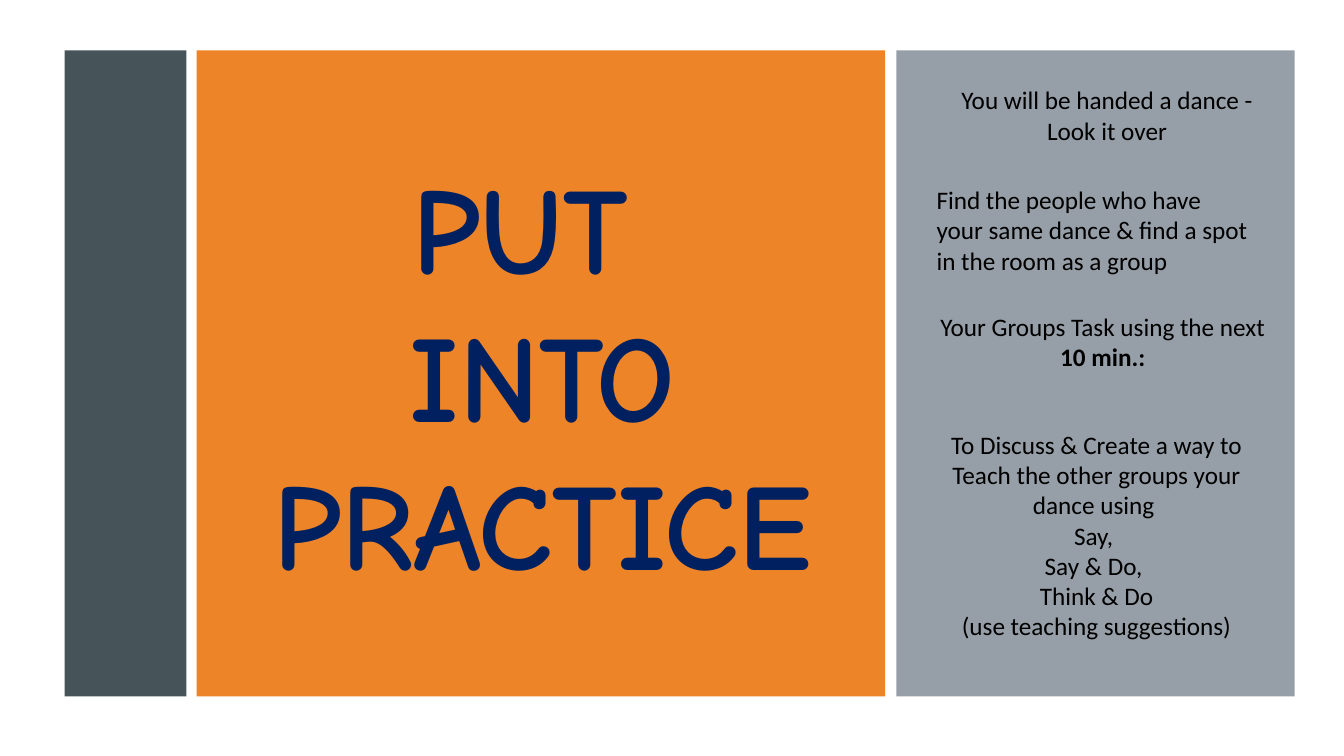
import pptx
import pptx.util
import pptx.dml.color
import pptx.enum.shapes
import pptx.enum.text

Inches = pptx.util.Inches
ALIGN = pptx.enum.text.PP_ALIGN
ANCHOR = pptx.enum.text.MSO_ANCHOR

COLORS = {"slate": "465359", "orange": "ED8428", "gray": "969FA7",
          "navy": "002060", "black": "000000"}

# Panels share one top and height: left, width, color
TOP, HEIGHT = 0.5, 6.41
PANELS = [(0.64, 1.21, "slate"), (1.95, 6.83, "orange"), (8.89, 3.95, "gray")]

# Title: a vertical tab marks a line break
TITLE = ["PUT \vINTO PRACTICE"]
TITLE_BOX = (2.36, 1.12, 6.04, 5.16)

# Notes in the gray panel: box, alignment, lines of (text, bold)
NOTES = [
    ((9.19, 0.79, 3.58, 0.7), ALIGN.CENTER,
     [("You will be handed a dance - Look it over", False)]),
    ((9.19, 1.78, 3.29, 1.01), ALIGN.LEFT,
     [("Find the people who have your same dance & find a spot "
       "in the room as a group", False)]),
    ((8.89, 3.04, 4.15, 0.7), ALIGN.CENTER,
     [("Your Groups Task using the next ", False), ("10 min.: ", True)]),
    ((9.19, 4.21, 3.37, 2.2), ALIGN.CENTER,
     [("To Discuss & Create a way to Teach the other groups your "
       "dance using ", False),
      ("Say, ", False), ("Say & Do, ", False), ("Think & Do", False),
      ("(use teaching suggestions)", False)]),
]


def rgb(name):
    return pptx.dml.color.RGBColor.from_string(COLORS[name])


def add_panel(slide, left, width, color):
    panel = slide.shapes.add_shape(
        pptx.enum.shapes.MSO_SHAPE.RECTANGLE,
        Inches(left), Inches(TOP), Inches(width), Inches(HEIGHT))
    panel.shadow.inherit = False
    panel.fill.solid()
    panel.fill.fore_color.rgb = rgb(color)
    panel.line.fill.background()


def add_text(slide, box, lines, align, font, size, color, anchor=ANCHOR.TOP):
    frame = slide.shapes.add_textbox(*map(Inches, box)).text_frame
    frame.word_wrap = True
    frame.vertical_anchor = anchor
    for i, (text, bold) in enumerate(lines):
        para = frame.add_paragraph() if i else frame.paragraphs[0]
        para.text = text
        para.alignment = align
        para.font.name = font
        para.font.size = pptx.util.Pt(size)
        para.font.bold = bold
        para.font.color.rgb = rgb(color)


def main():
    deck = pptx.Presentation()
    deck.slide_width, deck.slide_height = Inches(13.33), Inches(7.5)
    slide = deck.slides.add_slide(deck.slide_layouts[6])

    # Panels
    for panel in PANELS:
        add_panel(slide, *panel)

    # Title
    add_text(slide, TITLE_BOX, [(text, True) for text in TITLE], ALIGN.CENTER,
             "Comic Neue", 88, "navy", ANCHOR.MIDDLE)

    # Notes
    for box, align, lines in NOTES:
        add_text(slide, box, lines, align, "Calibri", 18, "black")

    deck.save("out.pptx")


if __name__ == "__main__":
    main()
